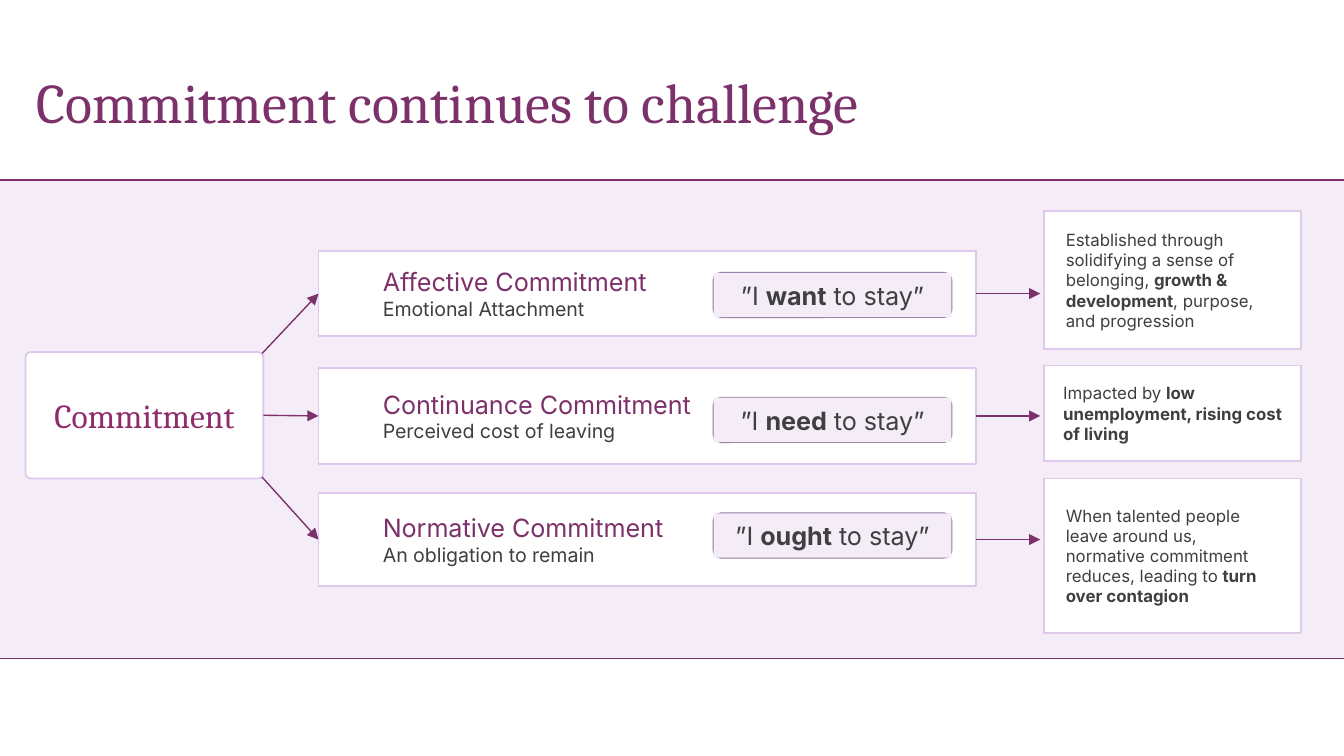
from pptx import Presentation
from pptx.dml.color import RGBColor
from pptx.enum.shapes import MSO_CONNECTOR as Link, MSO_SHAPE as Shape
from pptx.enum.text import MSO_ANCHOR as Anchor, MSO_AUTO_SIZE as Fit, PP_ALIGN as Align
from pptx.oxml.ns import qn
from pptx.util import Inches, Pt
from lxml.etree import SubElement

PLUM, LILAC, PALE, WHITE, GREY = "7C316A", "DFC9EA", "F4EDF8", "FFFFFF", "3F3F3F"
ROWS = [
    (1.87, 0.63, "Affective Commitment", "Emotional Attachment", 2.03, "want"),
    (2.74, 0.71, "Continuance Commitment", "Perceived cost of leaving", 2.96, "need"),
    (3.67, 0.69, "Normative Commitment", "An obligation to remain", 3.82, "ought"),
]
NOTES = [
    (1.57, 1.03, 0.16, [("Established through solidifying a sense of belonging, ", False),
                        ("growth & development", True), (", purpose, and progression", False)]),
    (2.72, 0.71, 0.14, [("Impacted by ", False),
                        ("low unemployment, rising cost of living", True)]),
    (3.56, 1.15, 0.16, [("When talented people leave around us, normative commitment "
                         "reduces, leading to ", False), ("turn over contagion", True)]),
]


def paint(hue):
    return RGBColor.from_string(hue)


def style(para, size, hue, font="Inter", align=Align.LEFT):
    para.font.size, para.font.name = Pt(size), font
    para.font.color.rgb = paint(hue)
    para.alignment = align


def fill_runs(para, runs):
    for text, bold in runs:
        run = para.add_run()
        run.text, run.font.bold = text, bold


def add_box(slide, box, fill, line=None, round_by=None):
    kind = Shape.RECTANGLE if round_by is None else Shape.ROUNDED_RECTANGLE
    shape = slide.shapes.add_shape(kind, *map(Inches, box))
    if round_by is not None:
        shape.adjustments[0] = round_by
    shape.shadow.inherit = False
    shape.fill.solid()
    shape.fill.fore_color.rgb = paint(fill)
    if line:
        shape.line.color.rgb = paint(line)
        shape.line.width = Pt(1)
    else:
        shape.line.fill.background()
    shape.text_frame.word_wrap = True
    shape.text_frame.vertical_anchor = Anchor.MIDDLE
    return shape


def add_arrow(slide, start, end):
    arrow = slide.shapes.add_connector(Link.STRAIGHT, *map(Inches, start + end))
    arrow.line.color.rgb = paint(PLUM)
    arrow.line.width = Pt(0.75)
    SubElement(arrow.line._get_or_add_ln(), qn("a:tailEnd"), type="triangle")
    SubElement(arrow._element.spPr, qn("a:effectLst"))
    return arrow


def add_title(slide, box):
    title = slide.shapes.title
    title.left, title.top, title.width, title.height = map(Inches, box)
    frame = title.text_frame
    frame.text = "Commitment continues to challenge"
    frame.margin_left = frame.margin_right = frame.margin_top = frame.margin_bottom = 0
    frame.vertical_anchor, frame.auto_size = Anchor.TOP, Fit.NONE
    style(frame.paragraphs[0], 30, PLUM, "Cambria")


def add_hub(slide, box):
    hub = add_box(slide, box, WHITE, LILAC, 0.04)
    hub.text_frame.text = "Commitment"
    style(hub.text_frame.paragraphs[0], 18, "8F2C6C", "Cambria", Align.CENTER)
    return hub


def add_quote(slide, box, verb):
    add_box(slide, box, "C9A5DD", "9278A1", 0.17)
    para = add_box(slide, box, PALE).text_frame.paragraphs[0]
    fill_runs(para, [("”I ", False), (verb, True), (" to stay”", False)])
    style(para, 13.5, GREY, align=Align.CENTER)


def add_row(slide, box, name, gloss, quote_top, verb):
    row = add_box(slide, box, WHITE, LILAC)
    frame = row.text_frame
    frame.text = f"{name}\n{gloss}"
    for para, size, hue in zip(frame.paragraphs, (13.5, 10.5), (PLUM, GREY)):
        style(para, size, hue)
        para._p.get_or_add_pPr().set("marL", str(Inches(0.38)))
    add_quote(slide, (box[0] + 2.94, quote_top, 1.77, 0.33), verb)
    return row


def add_note(slide, box, inset, runs):
    frame = add_box(slide, box, WHITE, LILAC).text_frame
    frame.margin_left = frame.margin_right = Inches(inset)
    fill_runs(frame.paragraphs[0], runs)
    style(frame.paragraphs[0], 9, GREY)


def add_flow(slide, left, top):
    hub = add_hub(slide, (left, top + 1.05, 1.77, 0.94))
    edge, high, low = left + 1.76, top + 1.06, top + 1.98
    mid = (high + low) / 2
    row_left, row_wide, note_left = left + 2.18, 4.89, left + 7.58
    for start, row_data, note in zip((high, mid, low), ROWS, NOTES):
        row_top, tall, *words = row_data
        row = add_row(slide, (row_left, row_top, row_wide, tall), *words)
        centre = row_top + tall / 2
        inward = add_arrow(slide, (edge, start), (row_left, centre))
        if start == mid:
            inward.begin_connect(hub, 3)
        inward.end_connect(row, 1)
        onward = add_arrow(slide, (row_left + row_wide, centre), (note_left - 0.03, centre))
        onward.begin_connect(row, 3)
        note_top, note_tall, inset, runs = note
        add_note(slide, (note_left, note_top, 1.91, note_tall), inset, runs)


def main():
    deck = Presentation()
    deck.slide_width = Inches(10)
    deck.slide_height = deck.slide_width * 9 // 16
    slide = deck.slides.add_slide(deck.slide_layouts[5])
    add_title(slide, (0.27, 0.5, 7.47, 0.61))
    add_box(slide, (-0.15, 1.34, 10.29, 3.56), PALE, PLUM)
    add_flow(slide, 0.19, 1.57)
    deck.save("out.pptx")


if __name__ == "__main__":
    main()
